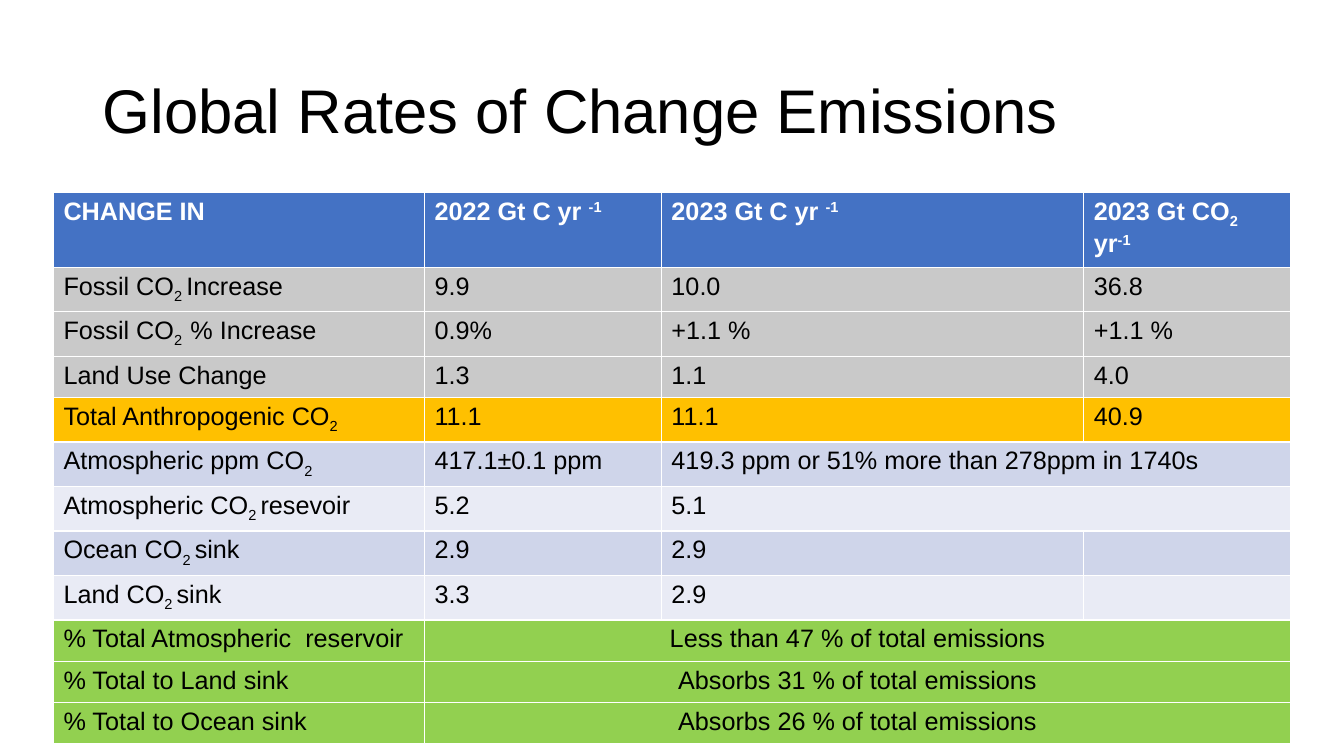
from pptx import Presentation
from pptx.dml.color import RGBColor
from pptx.enum.text import MSO_ANCHOR, PP_ALIGN
from pptx.util import Inches, Pt

# Content: "|" separates runs, "_" starts a subscript, "^" a superscript;
# None marks a cell merged into the one on its left.
TITLE = "Global Rates of Change Emissions"
ROWS = [
    ("header", "CHANGE IN", "2022 Gt C yr |^-1", "2023 Gt C yr |^-1", "2023 Gt CO|_2| yr|^-1"),
    ("source", "Fossil CO|_2 |Increase", "9.9", "10.0", "36.8"),
    ("source", "Fossil CO|_2  |% Increase", "0.9%", "+1.1 %", "+1.1 %"),
    ("source", "Land Use Change", "1.3", "1.1", "4.0"),
    ("total", "Total Anthropogenic CO|_2 ", "11.1", "11.1", "40.9"),
    ("band", "Atmospheric ppm CO|_2", "417.1±0.1 ppm",
     "419.3 ppm or 51% more than 278ppm in 1740s", None),
    ("light_band", "Atmospheric CO|_2 |resevoir", "5.2", "5.1", None),
    ("band", "Ocean CO|_2 |sink", "2.9", "2.9", ""),
    ("light_band", "Land CO|_2 |sink", "3.3", "2.9", ""),
    ("share", "% Total Atmospheric  reservoir", "Less than 47 % of total emissions", None, None),
    ("share", "% Total to Land sink", "Absorbs 31 % of total emissions", None, None),
    ("share", "% Total to Ocean sink", "Absorbs 26 % of total emissions", None, None),
]
COLUMN_WIDTHS = [3.68, 2.35, 4.19, 2.05]
ROW_HEIGHT = 0.41

THEME = {
    "font": "Arial",
    "title_size": 44,
    "table_size": 18,
    "text": "000000",
    "header_text": "FFFFFF",
    "fills": {
        "header": "4472C4",
        "source": "C9C9C9",
        "total": "FFC000",
        "band": "CFD5EA",
        "light_band": "E9EBF5",
        "share": "92D050",
    },
}
BASELINES = {"_": "-25000", "^": "30000"}


def style_paragraph(paragraph, size, color, bold=False):
    font = paragraph.font
    font.name = THEME["font"]
    font.size = Pt(size)
    font.bold = bold
    font.color.rgb = RGBColor.from_string(color)


def add_runs(paragraph, text):
    for part in text.split("|"):
        run = paragraph.add_run()
        baseline = BASELINES.get(part[:1])
        run.text = part[1:] if baseline else part
        if baseline:
            run.font._element.set("baseline", baseline)


def add_title(slide):
    box = slide.shapes.add_textbox(Inches(0.92), Inches(0.4), Inches(11.5), Inches(1.45))
    frame = box.text_frame
    frame.word_wrap = True
    frame.vertical_anchor = MSO_ANCHOR.MIDDLE
    paragraph = frame.paragraphs[0]
    paragraph.line_spacing = 0.9
    paragraph.add_run().text = TITLE
    style_paragraph(paragraph, THEME["title_size"], THEME["text"])


def fill_row(table, row_index, kind, texts):
    is_header = kind == "header"
    color = THEME["header_text" if is_header else "text"]
    for column_index, text in enumerate(texts):
        cell = table.cell(row_index, column_index)
        cell.fill.solid()
        cell.fill.fore_color.rgb = RGBColor.from_string(THEME["fills"][kind])
        if text:
            paragraph = cell.text_frame.paragraphs[0]
            style_paragraph(paragraph, THEME["table_size"], color, is_header)
            add_runs(paragraph, text)
            if kind == "share" and column_index == 1:
                paragraph.alignment = PP_ALIGN.CENTER
    # Merge the trailing cells into the last one with its own content
    if None in texts:
        first = texts.index(None) - 1
        table.cell(row_index, first).merge(table.cell(row_index, len(texts) - 1))


def add_emissions_table(slide):
    frame = slide.shapes.add_table(
        len(ROWS), len(COLUMN_WIDTHS), Inches(0.53), Inches(1.91),
        Inches(sum(COLUMN_WIDTHS)), Inches(ROW_HEIGHT * len(ROWS)))
    table = frame.table
    for column, width in zip(table.columns, COLUMN_WIDTHS):
        column.width = Inches(width)
    for row_index, (kind, *texts) in enumerate(ROWS):
        table.rows[row_index].height = Inches(ROW_HEIGHT)
        fill_row(table, row_index, kind, texts)


def main():
    presentation = Presentation()
    presentation.slide_width = Inches(13.33)
    presentation.slide_height = Inches(7.5)
    slide = presentation.slides.add_slide(presentation.slide_layouts[6])
    add_title(slide)
    add_emissions_table(slide)
    presentation.save("out.pptx")


if __name__ == "__main__":
    main()
